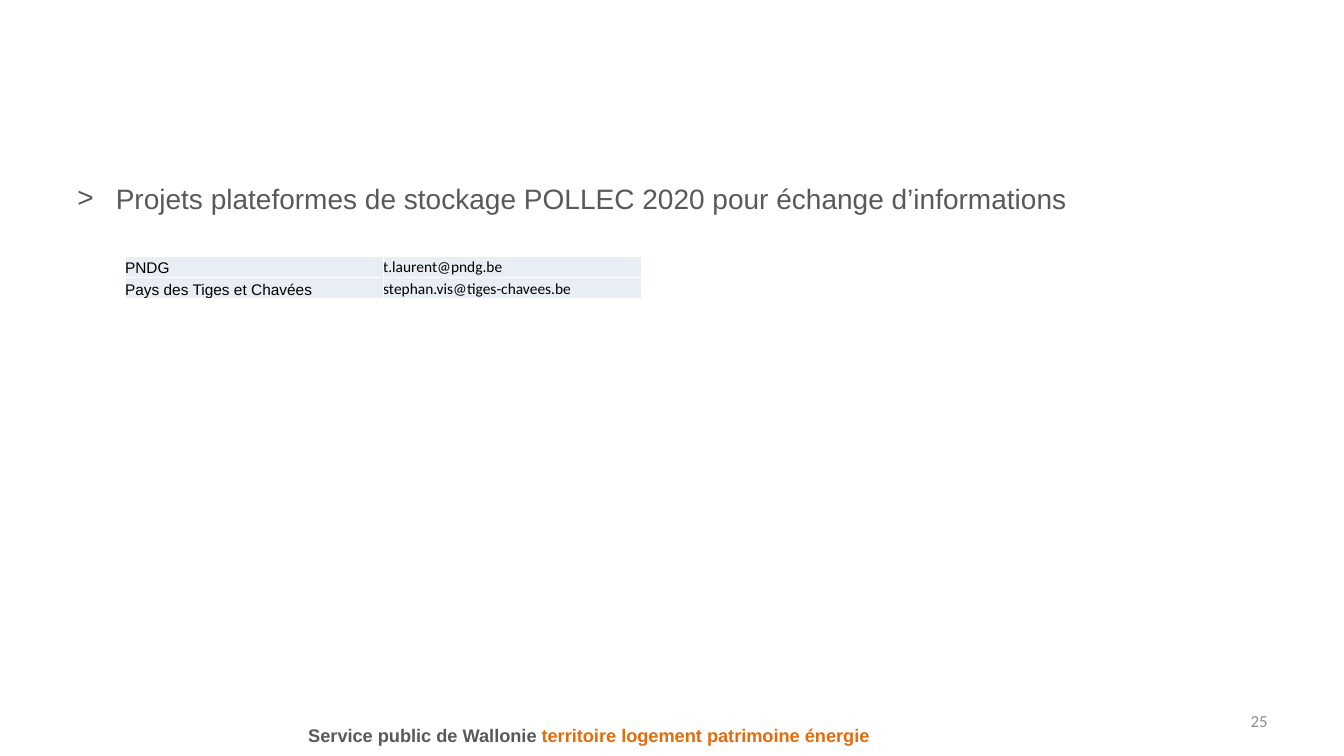
from lxml.etree import SubElement
from pptx import Presentation
from pptx.dml.color import RGBColor
from pptx.enum.text import MSO_ANCHOR, PP_ALIGN
from pptx.oxml.ns import qn
from pptx.util import Inches, Pt

COLORS = {
    "text": "595959",
    "accent": "E46C0A",
    "number": "8C8C8C",
    "black": "000000",
    "cell": "E9EDF4",
    "border": "FFFFFF",
}


def add_run(paragraph, text, font_name, size, color, bold=False):
    run = paragraph.add_run()
    run.text = text
    font_format = {"name": font_name, "size": Pt(size), "bold": bold}
    for attribute, value in font_format.items():
        setattr(run.font, attribute, value)
    run.font.color.rgb = RGBColor.from_string(COLORS[color])


def add_text_box(left, top, width, height, anchor=MSO_ANCHOR.TOP, align=PP_ALIGN.LEFT):
    """Add a wrapping text box and return its first paragraph."""
    shape = slide.shapes.add_textbox(Inches(left), Inches(top), Inches(width), Inches(height))
    shape.text_frame.word_wrap = True
    shape.text_frame.vertical_anchor = anchor
    paragraph = shape.text_frame.paragraphs[0]
    paragraph.alignment = align
    return paragraph


presentation = Presentation()
presentation.slide_width = Inches(13.33)
presentation.slide_height = Inches(7.5)
slide = presentation.slides.add_slide(presentation.slide_layouts[6])

# Footer
footer = add_text_box(2.57, 7.14, 6.15, 0.32, align=PP_ALIGN.RIGHT)
add_run(footer, "Service public de Wallonie ", "Arial", 13, "text", bold=True)
add_run(footer, "territoire logement patrimoine énergie", "Arial", 13, "accent", bold=True)

# Bulleted heading
heading = add_text_box(0.67, 1.75, 12, 4.95)
properties = heading._p.get_or_add_pPr()
properties.set("marL", str(Inches(0.38)))
properties.set("indent", str(Inches(-0.38)))
SubElement(properties, qn("a:buFont"), typeface="Arial")
SubElement(properties, qn("a:buChar"), char=">")
add_run(heading, "Projets plateformes de stockage POLLEC 2020 pour échange d’informations",
        "Arial", 20, "text")

# Slide number
number = add_text_box(9.56, 6.95, 3.11, 0.4, MSO_ANCHOR.MIDDLE, PP_ALIGN.RIGHT)
add_run(number, "25", "Calibri", 12, "number")

# Contact table
contacts = [
    ("PNDG", "t.laurent@pndg.be"),
    ("Pays des Tiges et Chavées", "stephan.vis@tiges-chavees.be"),
]
column_fonts = ("Arial", "Calibri")
cell_format = {
    "margin_left": 0,
    "margin_right": 0,
    "margin_top": 0,
    "margin_bottom": 0,
    "vertical_anchor": MSO_ANCHOR.BOTTOM,
}
table = slide.shapes.add_table(
    len(contacts), len(column_fonts), Inches(1.24), Inches(2.54), Inches(5.12), Inches(0.42)
).table
for row_index, contact in enumerate(contacts):
    table.rows[row_index].height = Inches(0.21)
    for column_index, (text, font_name) in enumerate(zip(contact, column_fonts)):
        cell = table.cell(row_index, column_index)
        for attribute, value in cell_format.items():
            setattr(cell, attribute, value)
        add_run(cell.text_frame.paragraphs[0], text, font_name, 11, "black")
        # Borders precede the fill in the cell properties
        cell_properties = cell._tc.get_or_add_tcPr()
        for side in ("lnL", "lnR", "lnT", "lnB"):
            line = SubElement(cell_properties, qn(f"a:{side}"), w=str(Pt(1)))
            line_fill = SubElement(line, qn("a:solidFill"))
            SubElement(line_fill, qn("a:srgbClr"), val=COLORS["border"])
        cell.fill.solid()
        cell.fill.fore_color.rgb = RGBColor.from_string(COLORS["cell"])

presentation.save("out.pptx")
